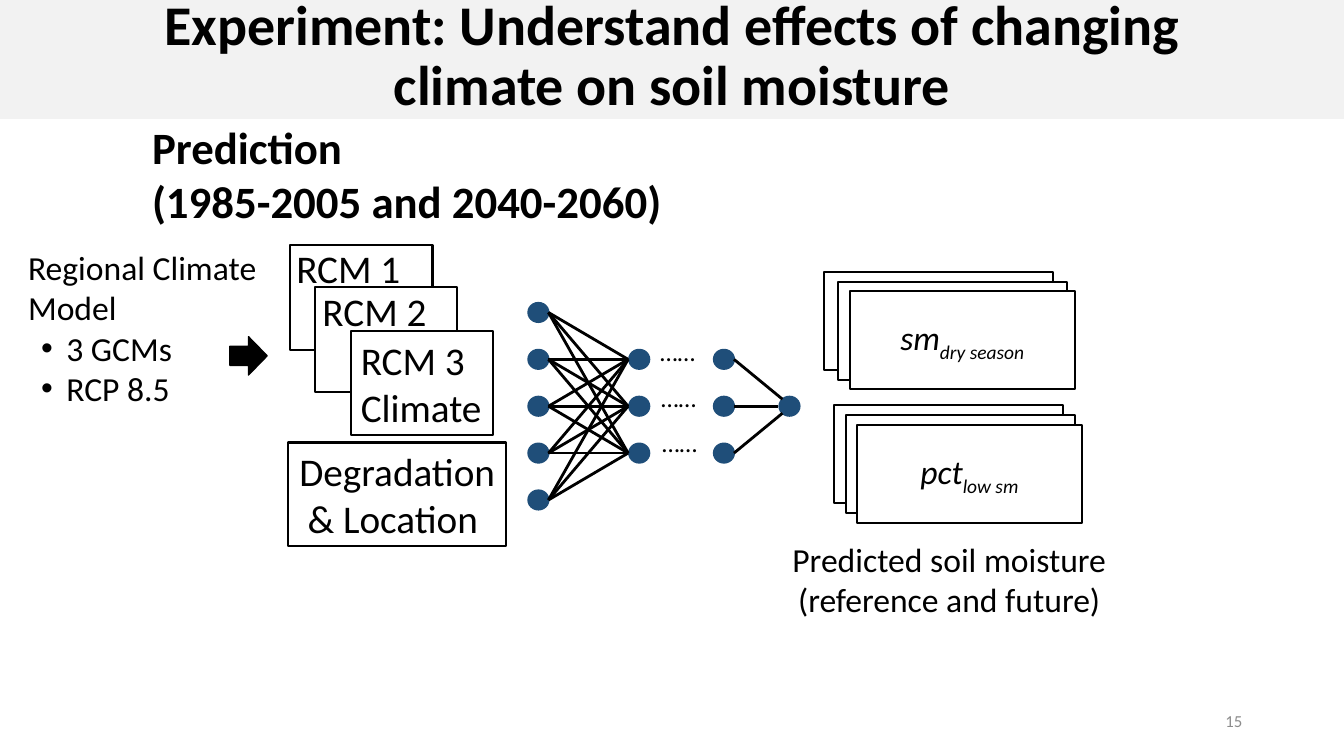
import pptx
import pptx.util
import pptx.dml.color
import pptx.enum.shapes
import pptx.enum.text
import pptx.oxml.ns
import lxml.etree

Inches, Pt = pptx.util.Inches, pptx.util.Pt
Shape = pptx.enum.shapes.MSO_SHAPE
Align = pptx.enum.text.PP_ALIGN
Anchor = pptx.enum.text.MSO_ANCHOR
Fit = pptx.enum.text.MSO_AUTO_SIZE

# Theme
THEME = {
    "font": "Calibri",
    "ink": "000000", "paper": "FFFFFF", "band": "F2F2F2",
    "node": "1F4E79", "pale": "8C8C8C",
    "title": 40, "head": 32, "card": 28, "body": 24, "dots": 18, "page": 12,
    "edge": 1.5, "link": 2,
}

# Content: a paragraph is a string or a list of (text, baseline) runs
TITLE = ["Experiment: Understand effects of changing", "climate on soil moisture"]
HEAD = ["Prediction", "(1985-2005 and 2040-2060)"]
MODEL = ["Regional Climate Model", "3 GCMs", "RCP 8.5"]
SITE = ["Degradation", "& Location "]
RESULT = ["Predicted soil moisture", "(reference and future)"]
DOTS = "……"
PAGE = "15"

# Card box, label box and text of each climate model
CARDS = [
    ((2.88, 2.43, 1.41, 1.04), (2.84, 2.37, 1.28, 0.57), ["RCM 1"]),
    ((3.12, 2.85, 1.41, 1.04), (3.1, 2.8, 1.28, 0.57), ["RCM 2"]),
    ((3.48, 3.28, 1.41, 1.04), None, ["RCM 3", "Climate"]),
]
# Left and top of each sheet, back to front, and the text on the front one
STACKS = [
    ([(8.27, 4.02), (8.39, 4.12), (8.5, 4.22)], [("pct", None), ("low sm", -25)]),
    ([(8.17, 2.7), (8.31, 2.8), (8.43, 2.89)], [("sm", None), ("dry season", -25)]),
]
SHEET = {"back": (2.27, 0.97), "front": (2.23, 0.97)}

# Network: centre of each layer and the rows its nodes stand on
NODE = (0.22, 0.21)
ROW_TOP, ROW_SPAN, ROWS = 3.1, 1.86, 5
LAYERS = {
    "input": (5.34, [0, 1, 2, 3, 4]),
    "first": (6.34, [1, 2, 3]),
    "last": (7.18, [1, 2, 3]),
    "output": (7.83, [2]),
}


def tint(name):
    return pptx.dml.color.RGBColor.from_string(THEME[name])


def apply(item, values):
    for name, value in values.items():
        setattr(item, name, value)


def place(box):
    return [Inches(n) for n in box]


def write(shape, lines, size, color="ink", bold=False, italic=False,
          align=Align.LEFT, anchor=Anchor.TOP, space=None, fit=Fit.NONE):
    frame = shape.text_frame
    apply(frame, {"word_wrap": True, "vertical_anchor": anchor, "auto_size": fit})
    for i, line in enumerate(lines):
        para = frame.paragraphs[0] if i == 0 else frame.add_paragraph()
        apply(para, {"alignment": align, "line_spacing": space})
        for text, base in [(line, None)] if isinstance(line, str) else line:
            run = para.add_run()
            run.text = text
            apply(run.font, {"name": THEME["font"], "size": Pt(THEME[size]),
                             "bold": bold, "italic": italic})
            run.font.color.rgb = tint(color)
            if base:
                run._r.get_or_add_rPr().set("baseline", str(base * 1000))
    return frame


def draw(slide, kind, box, fill="paper", edge="ink", width=THEME["edge"]):
    shape = slide.shapes.add_shape(kind, *place(box))
    shape.shadow.inherit = False
    shape.fill.solid()
    shape.fill.fore_color.rgb = tint(fill)
    if edge:
        shape.line.color.rgb = tint(edge)
        shape.line.width = Pt(width)
    else:
        shape.line.fill.background()
    return shape


def label(slide, box, lines, size, **style):
    return write(slide.shapes.add_textbox(*place(box)), lines, size, **style)


def link(slide, start, end):
    line = slide.shapes.add_connector(
        pptx.enum.shapes.MSO_CONNECTOR.STRAIGHT, *place(start + end))
    line.line.color.rgb = tint("ink")
    line.line.width = Pt(THEME["link"])
    lxml.etree.SubElement(line._element.spPr, pptx.oxml.ns.qn("a:effectLst"))


def bullet(para):
    props = para._p.get_or_add_pPr()
    props.set("marL", str(Inches(0.38)))
    props.set("indent", str(Inches(-0.25)))
    font = lxml.etree.SubElement(props, pptx.oxml.ns.qn("a:buFont"))
    font.set("typeface", "Arial")
    mark = lxml.etree.SubElement(props, pptx.oxml.ns.qn("a:buChar"))
    mark.set("char", "•")


def add_net(slide):
    wide, high = NODE
    spots = {name: [(x, ROW_TOP + ROW_SPAN * row / (ROWS - 1)) for row in rows]
             for name, (x, rows) in LAYERS.items()}
    for nodes in spots.values():
        for x, y in nodes:
            draw(slide, Shape.OVAL, (x - wide / 2, y - high / 2, wide, high),
                 "node", None)
    # Every input feeds every node of the first hidden layer
    for x, y in spots["input"]:
        for to_x, to_y in spots["first"]:
            link(slide, (x + 0.1, y), (to_x - 0.11, to_y))
    # The last hidden layer meets at the output
    out_x, out_y = spots["output"][0]
    for (x, y), shift, drop in zip(spots["last"], (0.07, 0.11, 0.07), (-0.07, 0, 0.07)):
        link(slide, (x + 0.1, y), (out_x - shift, out_y + drop))
    for i in range(len(spots["first"])):
        label(slide, (6.45 + 0.01 * i, 3.29 + 0.45 * i, 0.63, 0.44), [DOTS], "dots",
              fit=Fit.SHAPE_TO_FIT_TEXT)


def main():
    deck = pptx.Presentation()
    apply(deck, {"slide_width": Inches(13.33), "slide_height": Inches(7.5)})
    slide = deck.slides.add_slide(deck.slide_layouts[5])
    mid = {"align": Align.CENTER, "anchor": Anchor.MIDDLE}

    # Title band and heading
    title = slide.shapes.title
    apply(title, dict(zip(("left", "top", "width", "height"),
                          place((0, -0.04, 13.33, 1.22)))))
    title.fill.solid()
    title.fill.fore_color.rgb = tint("band")
    write(title, TITLE, "title", bold=True, space=0.9, **mid)
    label(slide, (1.41, 1.14, 5.44, 1.18), HEAD, "head", bold=True)

    # Predicted sheets
    for spots, text in STACKS:
        for spot in spots:
            front = spot == spots[-1]
            sheet = draw(slide, Shape.RECTANGLE,
                         spot + SHEET["front" if front else "back"])
            if front:
                write(sheet, [text], "body", italic=True, **mid)
    label(slide, (7.7, 5.28, 3.43, 0.93), RESULT, "body", **mid)

    # Neural network
    add_net(slide)

    # Climate model inputs
    frame = label(slide, (0.18, 2.59, 2.65, 1.65), MODEL, "body", anchor=Anchor.MIDDLE)
    frame.margin_bottom = Inches(0.38)
    for para in frame.paragraphs[1:]:
        bullet(para)
    draw(slide, Shape.RIGHT_ARROW, (2.28, 3.34, 0.37, 0.38), "ink", width=1)
    for box, tag, text in CARDS:
        card = draw(slide, Shape.RECTANGLE, box)
        if tag:
            label(slide, tag, text, "card")
        else:
            write(card, text, "card", anchor=Anchor.MIDDLE)
    site = draw(slide, Shape.RECTANGLE, (2.86, 4.39, 2.16, 1.03))
    write(site, SITE, "card", **mid)

    # Page number
    label(slide, (9.42, 6.95, 3, 0.4), [PAGE], "page", color="pale",
          align=Align.RIGHT, anchor=Anchor.MIDDLE)
    deck.save("out.pptx")


if __name__ == "__main__":
    main()
